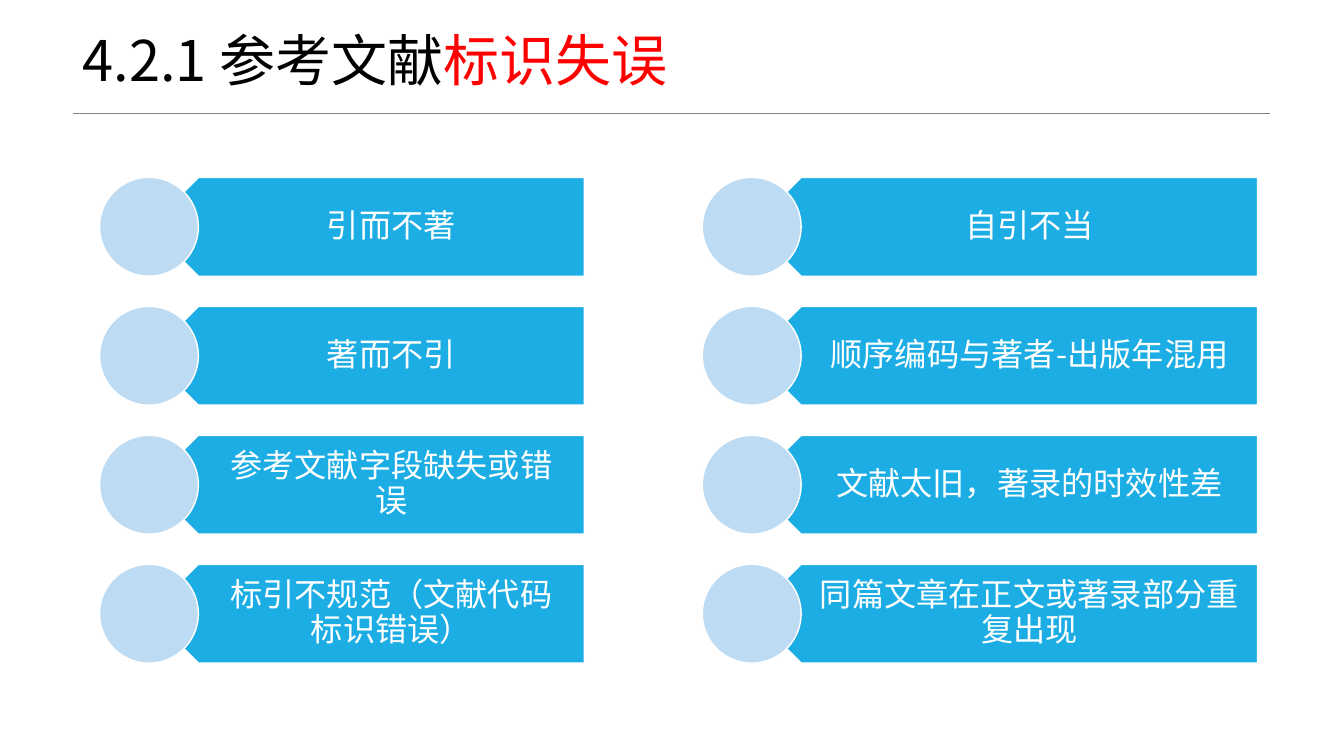
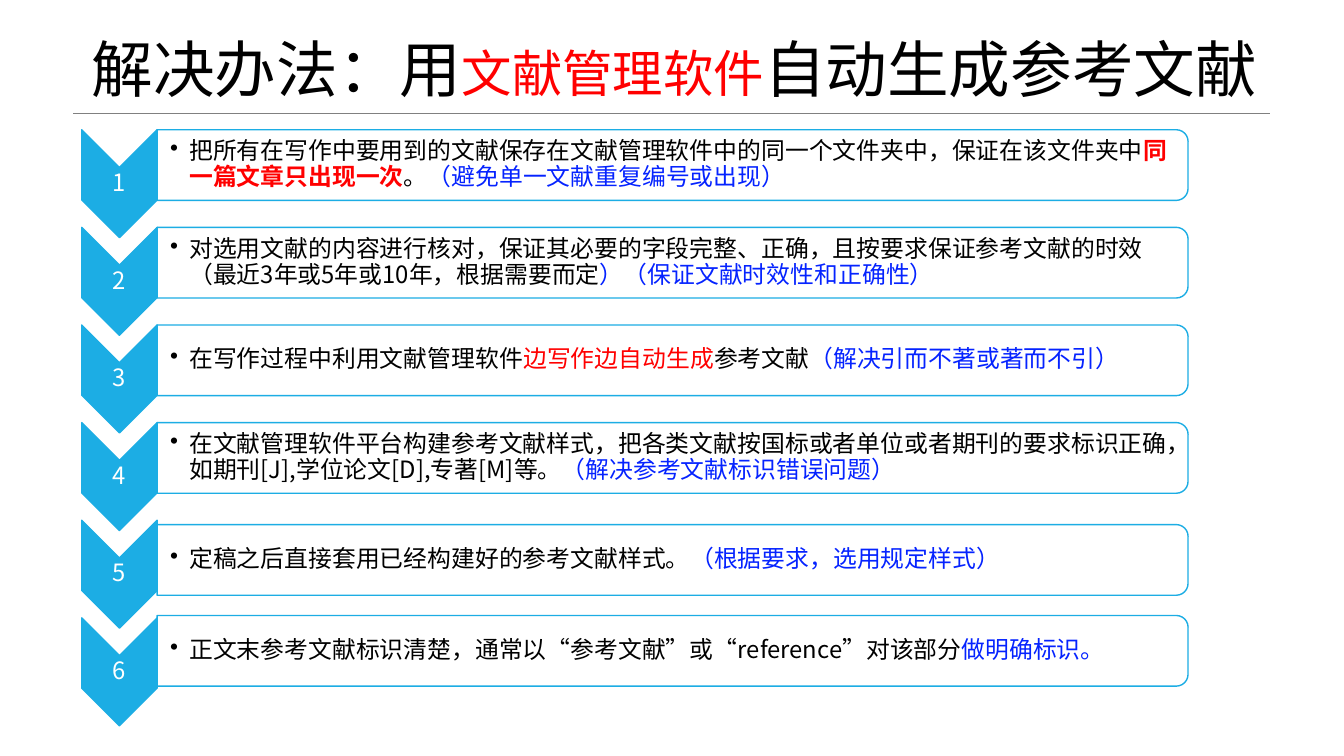
from dataclasses import dataclass

from lxml.etree import SubElement
from pptx import Presentation
from pptx.dml.color import RGBColor
from pptx.enum.shapes import MSO_CONNECTOR, MSO_SHAPE as SHAPE
from pptx.enum.text import MSO_ANCHOR, MSO_AUTO_SIZE, PP_ALIGN as ALIGN
from pptx.oxml.ns import qn
from pptx.util import Cm, Pt


@dataclass(frozen=True)
class Theme:
    font: str = "Noto Sans CJK SC"
    black: str = "000000"
    white: str = "FFFFFF"
    red: str = "FF0000"
    note: str = "0523FF"
    accent: str = "1CADE4"
    pale: str = "BDDBF2"
    rule: str = "808080"
    title: float = 40
    title_large: float = 44
    title_small: float = 36
    label: float = 23
    body: float = 17
    spacing: float = 0.9


T = Theme()


@dataclass(frozen=True)
class Span:
    text: str
    color: str = T.black
    size: float = T.body
    bold: bool = False


class Deck:
    def __init__(self):
        self.prs = Presentation()
        self.prs.slide_width, self.prs.slide_height = Cm(33.87), Cm(19.05)
        self.slide = None

    def add_slide(self, spans, x, y, w):
        self.slide = self.prs.slides.add_slide(self.prs.slide_layouts[5])
        line = self.slide.shapes.add_connector(
            MSO_CONNECTOR.STRAIGHT, Cm(1.85), Cm(2.85), Cm(32), Cm(2.85))
        line.line.color.rgb = RGBColor.from_string(T.rule)
        line.line.width = Pt(0.25)
        SubElement(line._element.spPr, qn("a:effectLst"))
        title = self.slide.shapes.title
        title.left, title.top, title.width, title.height = map(Cm, (x, y, w, 3.68))
        self.fill_text(title.text_frame, spans, ALIGN.LEFT)

    def fill_text(self, tf, spans, align, bullet=False):
        tf.word_wrap = True
        tf.auto_size = MSO_AUTO_SIZE.NONE
        tf.vertical_anchor = MSO_ANCHOR.MIDDLE
        p = tf.paragraphs[0]
        p.alignment, p.line_spacing = align, T.spacing
        if bullet:
            pPr = p._p.get_or_add_pPr()
            pPr.set("marL", str(Cm(0.48)))
            pPr.set("indent", str(Cm(-0.48)))
            SubElement(pPr, qn("a:buChar"), char="•")
        for span in spans:
            r = p.add_run()
            r.text = span.text
            r.font.name = T.font
            r.font.size = Pt(span.size)
            r.font.bold = span.bold
            r.font.color.rgb = RGBColor.from_string(span.color)
            SubElement(r._r.get_or_add_rPr(), qn("a:ea"), typeface=T.font)

    def text(self, spans, x, y, w, h, insets, align=ALIGN.CENTER, bullet=False):
        tf = self.slide.shapes.add_textbox(*map(Cm, (x, y, w, h))).text_frame
        tf.margin_left, tf.margin_top, tf.margin_right, tf.margin_bottom = map(Cm, insets)
        self.fill_text(tf, spans, align, bullet)

    def shape(self, kind, x, y, w, h, fill, line, rotation=0):
        if rotation == 90:
            x, y, w, h = x + (w - h) / 2, y + (h - w) / 2, h, w
        sp = self.slide.shapes.add_shape(kind, *map(Cm, (x, y, w, h)))
        sp.rotation = rotation
        sp.shadow.inherit = False
        sp.fill.solid()
        sp.fill.fore_color.rgb = RGBColor.from_string(fill)
        sp.line.color.rgb = RGBColor.from_string(line)
        sp.line.width = Pt(1)

    def label_bar(self, label, x, y, w):
        size = 2.49
        self.shape(SHAPE.PENTAGON, x + size / 2, y, w, size, T.accent, T.white, 180)
        self.text([Span(label, T.white, T.label)], x + size * 0.75, y,
                  w - size / 4, size, (1.09, 0.25, 0.46, 0.25))
        self.shape(SHAPE.OVAL, x, y, size, size, T.pale, T.white)

    def step(self, number, spans, y, card_y):
        x, w = 2.06, 1.9
        thin = 0.03
        self.shape(SHAPE.CHEVRON, x, y, w, 2.72, T.accent, T.accent, 90)
        self.text([Span(str(number), T.white)], x, y + w / 2, w, 0.82, (thin,) * 4)
        self.shape(SHAPE.ROUND_2_SAME_RECTANGLE, x + w, card_y, 25.98, 1.78,
                   T.white, T.accent, 90)
        self.text(spans, x + w, card_y + 0.09, 25.88, 1.6,
                  (0.33, thin, thin, thin), ALIGN.LEFT, bullet=True)


COLUMNS = [
    (2.51, 10.97, ["引而不著", "著而不引", "参考文献字段缺失或错误",
                   "标引不规范（文献代码标识错误）"]),
    (17.7, 12.75, ["自引不当", "顺序编码与著者-出版年混用", "文献太旧，著录的时效性差",
                   "同篇文章在正文或著录部分重复出现"]),
]

STEPS = [
    (0, [Span("把所有在写作中要用到的文献保存在文献管理软件中的同一个文件夹中，保证在该文件夹中"),
         Span("同一篇文章只出现一次", T.red, bold=True),
         Span("。"),
         Span("（避免单一文献重复编号或出现）", T.note)]),
    (0, [Span("对选用文献的内容进行核对，保证其必要的字段完整、正确，且按要求保证参考文献的时效"
              "（最近3年或5年或10年，根据需要而定"),
         Span("）（保证文献时效性和正确性）", T.note)]),
    (0, [Span("在写作过程中利用文献管理软件"),
         Span("边写作边自动生成", T.red),
         Span("参考文献"),
         Span("（解决引而不著或著而不引）", T.note)]),
    (0, [Span("在文献管理软件平台构建参考文献样式，把各类文献按国标或者单位或者期刊的要求标识正确，"
              "如期刊[J],学位论文[D],专著[M]等。"),
         Span("（解决参考文献标识错误问题）", T.note)]),
    (0.11, [Span("定稿之后直接套用已经构建好的参考文献样式。"),
            Span("（根据要求，选用规定样式）", T.note)]),
    (-0.06, [Span("正文末参考文献标识清楚，通常以“参考文献”或“reference”对该部分"),
             Span("做明确标识。", T.note)]),
]


def main():
    deck = Deck()

    deck.add_slide([Span("4.2.1 参考文献", size=T.title),
                    Span("标识失误", T.red, T.title)], 1.83, -0.25, 29.21)
    for x, w, labels in COLUMNS:
        for row, label in enumerate(labels):
            deck.label_bar(label, x, 4.47 + row * 3.25, w)

    deck.add_slide([Span("解决办法：用", size=T.title_large),
                    Span("文献管理软件", T.red, T.title_small),
                    Span("自动生成参考文献", size=T.title_large)], 2.06, 0, 30.53)
    for row, (shift, spans) in enumerate(STEPS):
        y = 3.27 + row * 2.46
        deck.step(row + 1, spans, y, y + shift)

    deck.prs.save("out.pptx")


if __name__ == "__main__":
    main()
